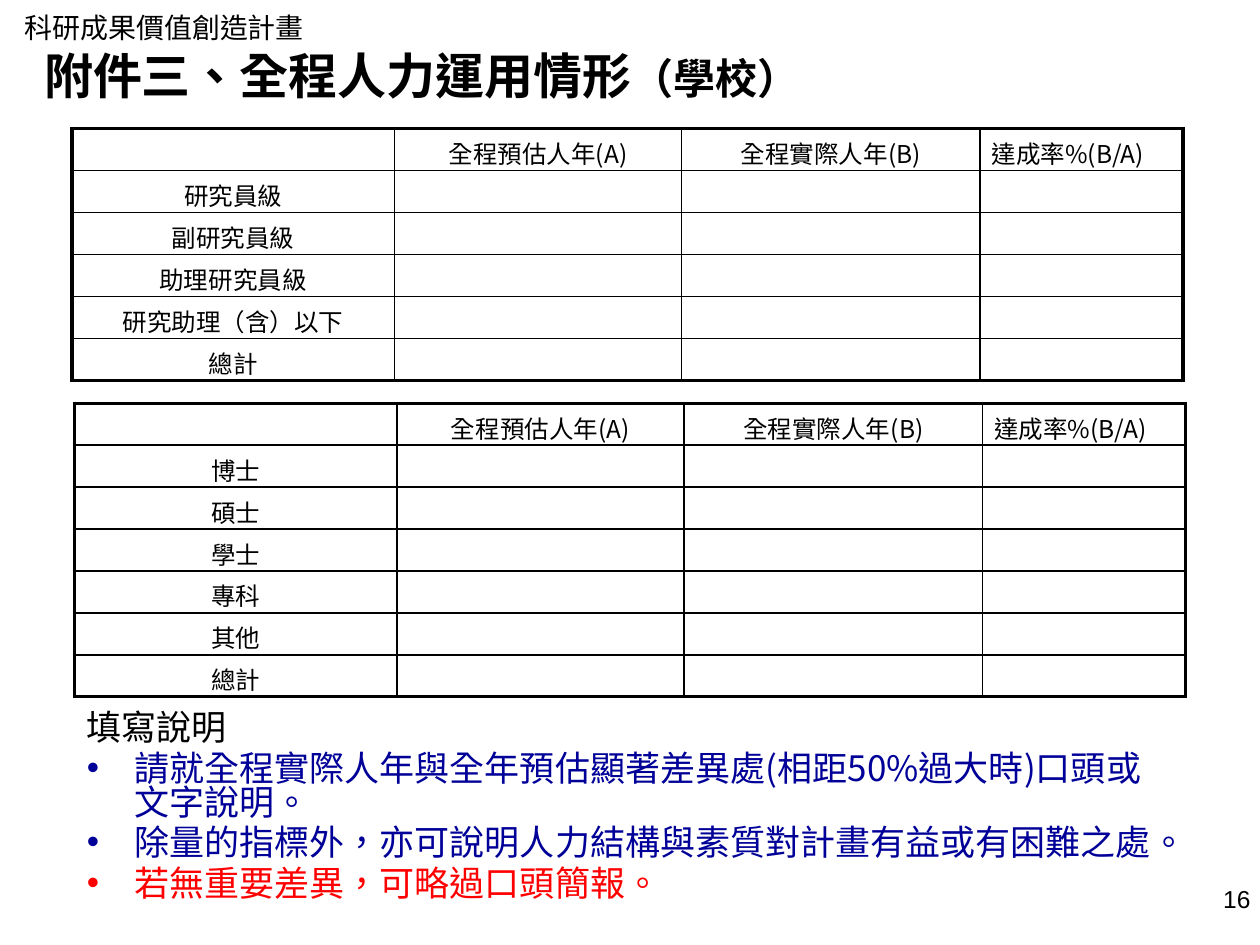
import pptx
import pptx.util
import pptx.dml.color
import pptx.enum.lang
import pptx.enum.text
import pptx.oxml.ns
from lxml import etree

Cm, Pt = pptx.util.Cm, pptx.util.Pt
ALIGN = pptx.enum.text.PP_ALIGN
ANCHOR = pptx.enum.text.MSO_ANCHOR
qn = pptx.oxml.ns.qn

COLORS = {"black": "000000", "navy": "000099", "red": "FF0000"}
HAN = "Noto Sans CJK SC"
THIN, THICK = Pt(1), Pt(2.25)
WIDTHS = [6.5, 5.79, 6.02, 4.09]
HEADS = ["", "全程預估人年(A)", "全程實際人年(B)", "達成率%(B/A)"]
RANKS = ["研究員級", "副研究員級", "助理研究員級", "研究助理（含）以下", "總計"]
GRADES = ["博士", "碩士", "學士", "專科", "其他", "總計"]
NOTES = [
    ("請就全程實際人年與全年預估顯著差異處(相距50%過大時)口頭或文字說明。", "navy"),
    ("除量的指標外，亦可說明人力結構與素質對計畫有益或有困難之處。", "navy"),
    ("若無重要差異，可略過口頭簡報。", "red"),
]


def write(para, text, size=14, face=HAN, color="black", bold=False, align=None):
    """Append one formatted run to a paragraph."""
    run = para.add_run()
    run.text = text
    font = run.font
    font.size, font.name, font.bold = Pt(size), face, bold
    font.color.rgb = pptx.dml.color.RGBColor.from_string(COLORS[color])
    font.language_id = pptx.enum.lang.MSO_LANGUAGE_ID.TRADITIONAL_CHINESE
    latin = run._r.rPr.find(qn("a:latin"))
    latin.addnext(latin.makeelement(qn("a:ea"), {"typeface": HAN}))
    if align is not None:
        para.alignment = align


def frame(slide, box, anchor=ANCHOR.TOP):
    """Add a wrapping text box and return its text frame."""
    area = slide.shapes.add_textbox(*map(Cm, box)).text_frame
    area.word_wrap = True
    area.vertical_anchor = anchor
    return area


def border(cell, widths):
    """Draw cell edges; widths maps L, R, T and B to line widths."""
    props = cell._tc.get_or_add_tcPr()
    for side, width in widths.items():
        line = etree.SubElement(props, qn("a:ln" + side), w=str(width))
        fill = etree.SubElement(line, qn("a:solidFill"))
        etree.SubElement(fill, qn("a:srgbClr"), val=COLORS["black"])


def grid(slide, box, names):
    """Add a staffing table with one row per name below the heads."""
    rows = [HEADS] + [[name, "", "", ""] for name in names]
    last, end = len(rows) - 1, len(HEADS) - 1
    table = slide.shapes.add_table(len(rows), len(HEADS), *map(Cm, box)).table
    table.first_row = table.horz_banding = False
    for column, width in zip(table.columns, WIDTHS):
        column.width = Cm(width)
    for r, texts in enumerate(rows):
        table.rows[r].height = Cm(box[3] / len(rows))
        for c, text in enumerate(texts):
            cell = table.cell(r, c)
            cell.margin_left = cell.margin_right = Cm(0.23)
            cell.margin_top = Cm(0.13 if text else 0)
            cell.margin_bottom = 0
            cell.vertical_anchor = ANCHOR.MIDDLE
            border(cell, {
                "L": THICK if c == 0 else THIN,
                "R": THICK if c == end else THIN,
                "T": THICK if r == 0 else THIN,
                "B": THICK if r == last else THIN,
            })
            cell.fill.background()
            para = cell.text_frame.paragraphs[0]
            if text:
                write(para, text, align=ALIGN.LEFT if c == end else ALIGN.CENTER)
            else:
                para.font.size = Pt(14)


def bullet(para):
    props = para._p.get_or_add_pPr()
    props.set("marL", str(Cm(0.96)))
    props.set("indent", str(Cm(-0.96)))
    etree.SubElement(props, qn("a:buFont"), typeface="Arial")
    etree.SubElement(props, qn("a:buChar"), char="•")


def guide(slide, box):
    """Add the filling notes."""
    area = frame(slide, box)
    first = area.paragraphs[0]
    first.line_spacing = 0.8
    write(first, "填寫說明", size=20)
    for text, color in NOTES:
        para = area.add_paragraph()
        bullet(para)
        para.line_spacing = 0.8
        para.space_before = Pt(4)
        write(para, text, size=20, color=color)


def title(slide, box):
    para = frame(slide, box, ANCHOR.MIDDLE).paragraphs[0]
    for text, size in [("附件三、全程人力運用情形", 28), ("（學校）", 24)]:
        write(para, text, size=size, face="Times New Roman", bold=True)


def label(slide, box, text, anchor=ANCHOR.TOP, **style):
    write(frame(slide, box, anchor).paragraphs[0], text, **style)


def main():
    deck = pptx.Presentation()
    deck.slide_width, deck.slide_height = Cm(25.4), Cm(19.05)
    slide = deck.slides.add_slide(deck.slide_layouts[6])
    label(slide, (0.25, 0.08, 6.22, 0.94), "科研成果價值創造計畫",
          anchor=ANCHOR.MIDDLE, size=16)
    guide(slide, (1.5, 14.27, 22.4, 4.37))
    title(slide, (0.64, 0.79, 15.9, 1.45))
    grid(slide, (1.45, 2.59, 22.4, 5.08), RANKS)
    grid(slide, (1.5, 8.13, 22.4, 5.92), GRADES)
    label(slide, (22.9, 17.7, 2.56, 1.32), "16", face="Arial", align=ALIGN.RIGHT)
    deck.save("out.pptx")


if __name__ == "__main__":
    main()
